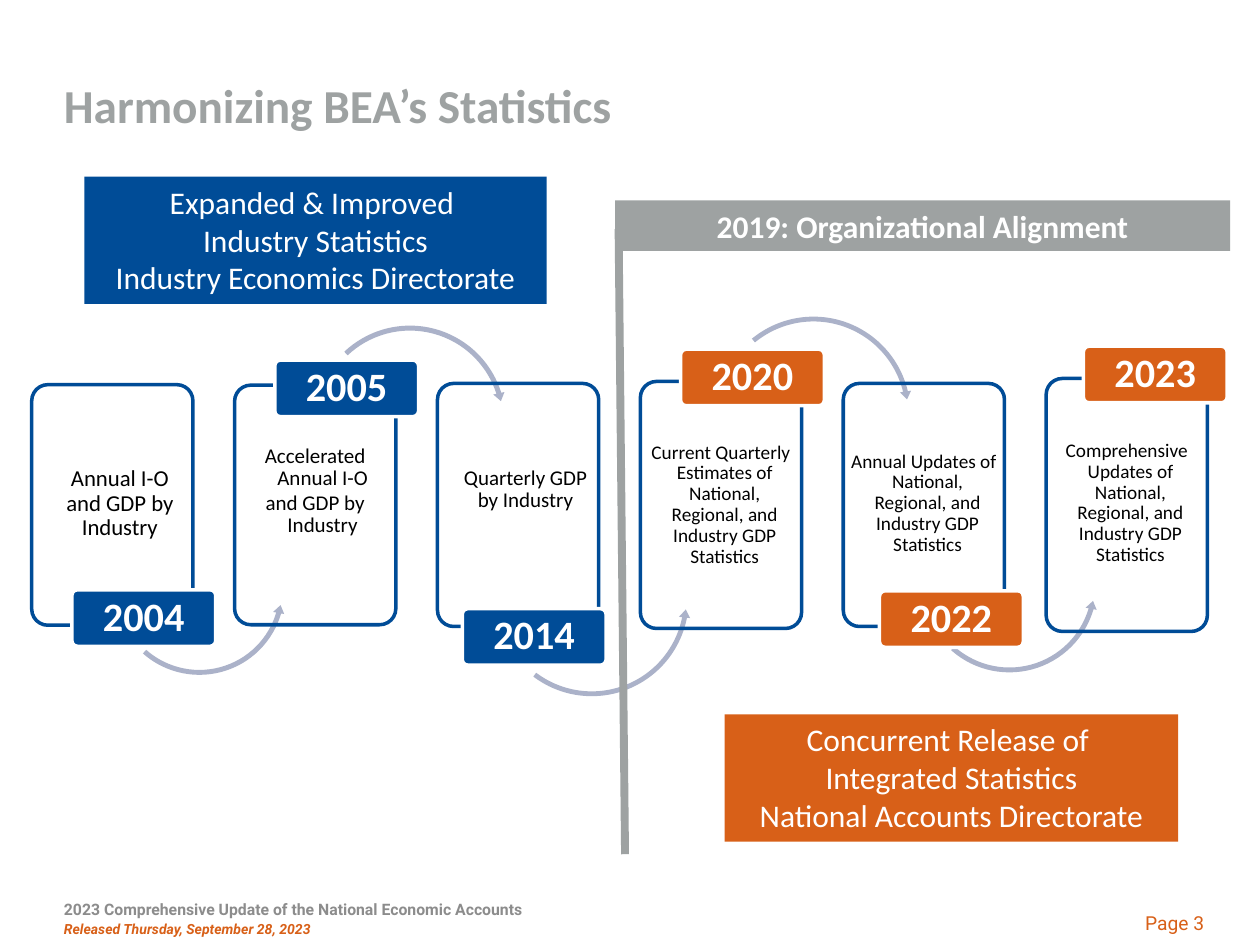
"""Build the slide on harmonizing BEA's statistics as a timeline from 2004 to 2023."""
from pptx import Presentation
from pptx.dml.color import RGBColor
from pptx.enum.shapes import MSO_CONNECTOR, MSO_SHAPE as SHAPE
from pptx.enum.text import MSO_ANCHOR as ANCHOR, PP_ALIGN as ALIGN
from pptx.oxml.ns import qn
from pptx.util import Cm, Pt

COLORS = {
    "blue": "004C97", "orange": "D86018", "gray": "9EA2A2", "footer": "8C8C8C",
    "arrow": "ABB2C9", "white": "FFFFFF", "black": "000000",
}


def add_block(kind, left, top, width, height, fill=None, line=None):
    area = [Cm(length) for length in (left, top, width, height)]
    if kind is None:
        block = slide.shapes.add_textbox(*area)
    else:
        block = slide.shapes.add_shape(kind, *area)
        block.shadow.inherit = False
        if fill:
            block.fill.solid()
            block.fill.fore_color.rgb = RGBColor.from_string(COLORS[fill])
        else:
            block.fill.background()
        if line:
            block.line.color.rgb = RGBColor.from_string(COLORS[line])
            block.line.width = Pt(2)
        else:
            block.line.fill.background()
    block.text_frame.word_wrap = True
    block.text_frame.vertical_anchor = ANCHOR.TOP
    return block


def add_line(block, text, size, color, align=ALIGN.CENTER, font="Calibri", bold=False, italic=False):
    frame = block.text_frame
    paragraph = frame.paragraphs[0] if not frame.paragraphs[0].runs else frame.add_paragraph()
    paragraph.alignment = align
    run = paragraph.add_run()
    run.text = text
    run.font.name, run.font.size = font, Pt(size)
    run.font.bold, run.font.italic = bold, italic
    run.font.color.rgb = RGBColor.from_string(COLORS[color])
    return paragraph


deck = Presentation()
deck.slide_width, deck.slide_height = Cm(25.4), Cm(19.05)
slide = deck.slides.add_slide(deck.slide_layouts[6])

page = add_block(None, 21.79, 18.19, 2.74, 0.81)
page.text_frame.vertical_anchor = ANCHOR.MIDDLE
add_line(page, "Page 3", 11, "orange", ALIGN.RIGHT, "Roboto")

title = add_block(None, 1.04, 1.37, 19.25, 1.47)
title.text_frame.vertical_anchor = ANCHOR.MIDDLE
add_line(title, "Harmonizing BEA’s Statistics", 27, "gray", ALIGN.LEFT, bold=True)

gdp_updates = "Updates of National, Regional, and Industry GDP Statistics"
milestones = [
    ("2004", "blue", 4.85, (1.45, 11.89), 8.36, 13, 0.3, 0, ["Annual I-O and GDP by Industry"]),
    ("2005", "blue", 4.83, (5.54, 7.26), 8.89, 12, 0.3, -0.3,
     ["Accelerated Annual I-O", "and GDP by Industry"]),
    ("2014", "blue", 4.9, (9.32, 12.27), 8.07, 12, 0.3, 0, ["Quarterly GDP by Industry"]),
    ("2020", "orange", 4.98, (13.72, 7.04), 8.84, 11, 0.15, -0.15,
     ["Current Quarterly Estimates of National, Regional, and Industry GDP Statistics"]),
    ("2022", "orange", 4.9, (17.73, 11.91), 9.02, 11, 0.15, -0.15, [f"Annual {gdp_updates}"]),
    ("2023", "orange", 5.1, (21.84, 6.98), 8.81, 11, 0.15, -0.15, [f"Comprehensive {gdp_updates}"]),
]
arrows = [
    (2.24, 10.11, 3.56, (0.028, 3.373, 9.793, 78.91, 0.032)),
    (6.27, 6.5, 3.99, (0.025, 2.998, 205.492, 136.001, 0.029)),
    (9.91, 10.06, 4.04, (0.024, 2.948, 6.692, 76.234, 0.028)),
    (14.38, 6.32, 4.04, (0.024, 2.94, 207.897, 138.347, 0.028)),
    (18.52, 9.96, 3.66, (0.027, 3.278, 9.815, 79.027, 0.031)),
]
for step, (year, color, height, corner, text_top, size, margin, indent, lines) in enumerate(milestones):
    left = 0.64 + 4.09 * step
    card = add_block(SHAPE.ROUNDED_RECTANGLE, left, 10.18 - height / 2, 3.25, height, line="blue")
    card.adjustments[0] = 0.1

    summary = add_block(None, left + 0.09, text_top, 3.07, 3.6)
    frame = summary.text_frame
    frame.margin_left = frame.margin_right = Cm(0.05 if size == 11 else 0.08)
    frame.margin_top = frame.margin_bottom = Cm(0.08)
    if indent == 0:
        frame.vertical_anchor = ANCHOR.MIDDLE
    for line in lines:
        paragraph = add_line(summary, line, size, "black")
        paragraph.line_spacing, paragraph.space_after = 0.9, Pt(1)
        properties = paragraph._p.get_or_add_pPr()
        properties.set("marL", str(Cm(margin)))
        properties.set("indent", str(Cm(indent)))

    if step < len(arrows):
        arrow_left, arrow_top, diameter, bend = arrows[step]
        kind = SHAPE.CIRCULAR_ARROW if step % 2 else SHAPE.LEFT_CIRCULAR_ARROW
        arrow = add_block(kind, arrow_left, arrow_top, diameter, diameter, "arrow")
        for index, value in enumerate(bend):
            arrow.adjustments[index] = value

    badge = add_block(SHAPE.ROUNDED_RECTANGLE, *corner, 2.9, 1.14, color, "white")
    badge.adjustments[0] = 0.1
    badge.text_frame.vertical_anchor = ANCHOR.MIDDLE
    badge.text_frame.margin_top = badge.text_frame.margin_bottom = Cm(0.08)
    add_line(badge, year, 23, "white", bold=True).line_spacing = 0.9

footer = add_block(None, 1.04, 18.01, 18.42, 1.4 - 0.36)
add_line(footer, "2023 Comprehensive Update of the National Economic Accounts", 9, "footer",
         ALIGN.LEFT, "Roboto", bold=True).space_after = Pt(1.1)
add_line(footer, "Released Thursday, September 28, 2023", 8, "orange",
         ALIGN.LEFT, "Roboto", bold=True, italic=True)

directorates = [
    (14.61, 14.4, 9.14, "orange",
     ["Concurrent Release of ", "Integrated Statistics", "National Accounts Directorate"]),
    (1.7, 3.56, 9.32, "blue",
     ["Expanded & Improved ", "Industry Statistics", "Industry Economics Directorate"]),
]
for left, top, width, color, lines in directorates:
    directorate = add_block(SHAPE.RECTANGLE, left, top, width, 2.57, color)
    for line in lines:
        add_line(directorate, line, 18, "white")

alignment = add_block(SHAPE.RECTANGLE, 12.4, 4.04, 12.4, 1.02, "gray")
alignment.text_frame.vertical_anchor = ANCHOR.MIDDLE
add_line(alignment, "2019: Organizational Alignment", 18, "white", bold=True)

divider = slide.shapes.add_connector(MSO_CONNECTOR.STRAIGHT, Cm(12.47), Cm(4.62), Cm(12.6), Cm(17.22))
divider.line.color.rgb = RGBColor.from_string(COLORS["gray"])
divider.line.width = Pt(4.5)
divider._element.spPr.append(divider._element.makeelement(qn("a:effectLst"), {}))

deck.save("out.pptx")
